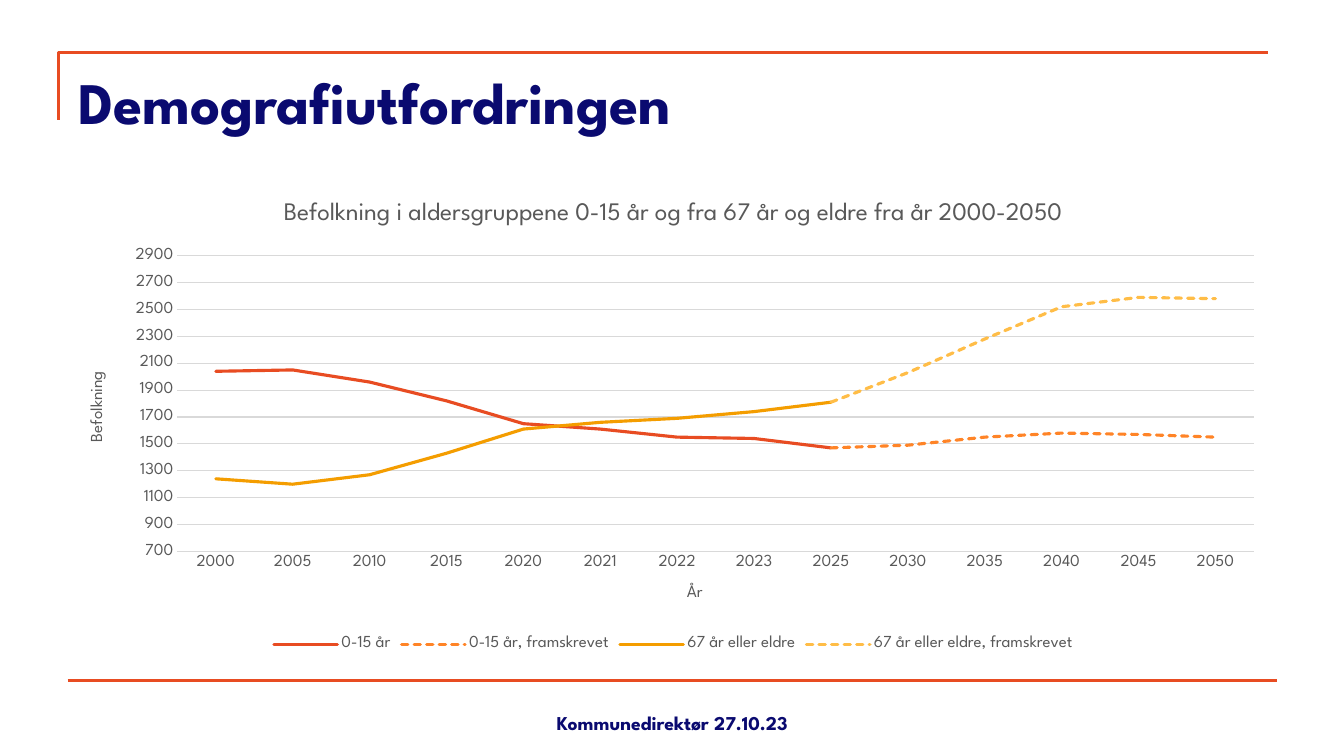
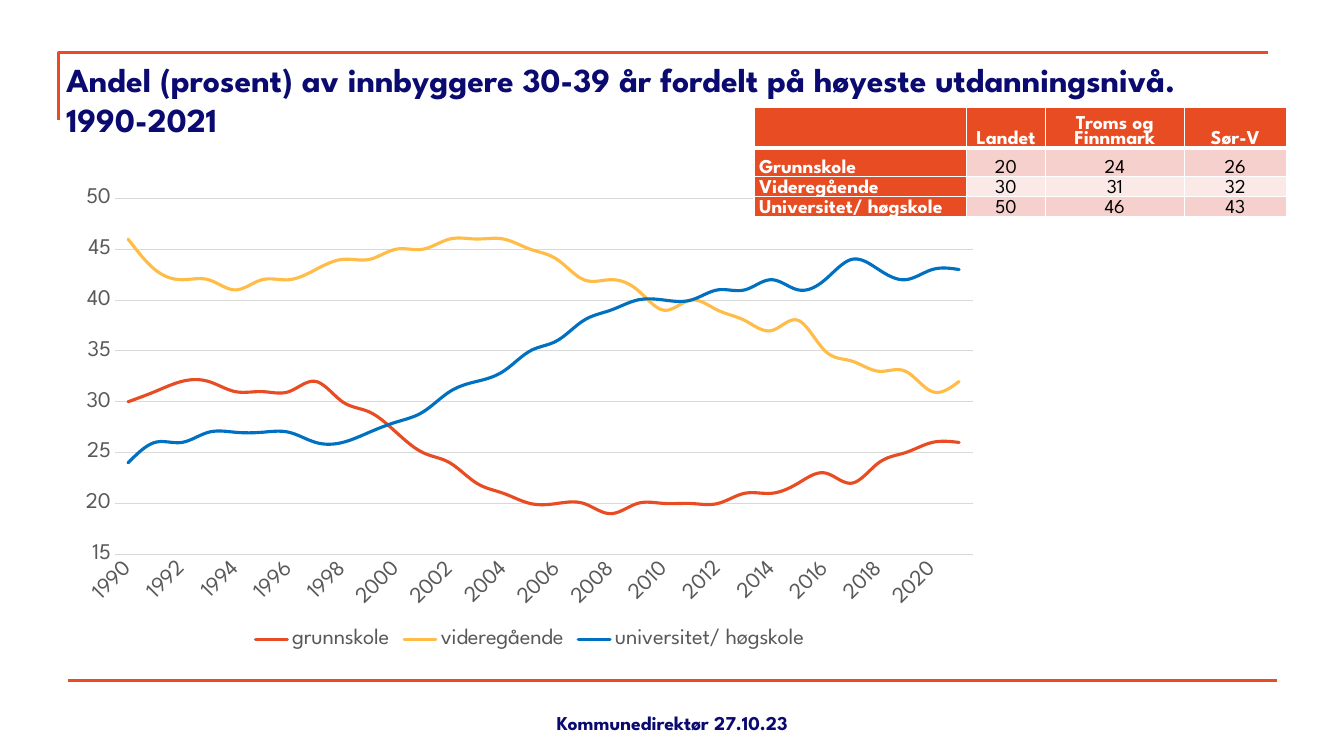
"""Builds two slides on population and education with line charts and a table."""
from lxml import etree
from pptx import Presentation
from pptx import util as u
from pptx.chart.data import CategoryChartData
from pptx.dml.color import RGBColor
from pptx.enum import chart as ch, dml, shapes, text
from pptx.oxml import parse_xml
from pptx.oxml.ns import nsdecls, qn

FONT = "League Spartan"
NAVY = RGBColor(0x0A, 0x0A, 0x70)
RED = RGBColor(0xE8, 0x4C, 0x22)
ORANGE = RGBColor(0xFF, 0x84, 0x27)
AMBER = RGBColor(0xF4, 0x9D, 0x00)
YELLOW = RGBColor(0xFF, 0xBD, 0x47)
BLUE = RGBColor(0x00, 0x70, 0xC0)
GREY = RGBColor(0x59, 0x59, 0x59)
GRID = RGBColor(0xD9, 0xD9, 0xD9)
WHITE = RGBColor(0xFF, 0xFF, 0xFF)
BLACK = RGBColor(0x00, 0x00, 0x00)
PINK = RGBColor(0xF6, 0xD0, 0xCD)
PALE = RGBColor(0xFB, 0xE9, 0xE8)

deck = Presentation()
deck.slide_width, deck.slide_height = u.Inches(13.33), u.Inches(7.5)
COL, ROW = deck.slide_width / 100, deck.slide_height / 100


def style(font, size, color, bold=False):
    font.name, font.size, font.bold = FONT, u.Pt(size), bold
    font.color.rgb = color


def add_line_chart(slide, box, years, series, size, scale, plot, smooth):
    left, top, width, height = box
    data = CategoryChartData()
    data.categories = years
    for name, values, _, _ in series:
        data.add_series(name, values)
    chart = slide.shapes.add_chart(
        ch.XL_CHART_TYPE.LINE, int(left * COL), int(top * ROW),
        int(width * COL), int(height * ROW), data).chart
    style(chart.font, size, GREY)
    chart.has_title = False
    chart.has_legend = True
    chart.legend.position = ch.XL_LEGEND_POSITION.BOTTOM
    chart.legend.include_in_layout = False
    style(chart.legend.font, size, GREY)
    chart.plots[0].vary_by_categories = False
    for line, (_, _, color, dash) in zip(chart.plots[0].series, series):
        line.smooth = smooth
        line.format.line.color.rgb = color
        line.format.line.width = u.Pt(2.25)
        if dash:
            line.format.line.dash_style = dash
        line._element.spPr.find(qn("a:ln")).set("cap", "rnd")
    for axis in (chart.category_axis, chart.value_axis):
        axis.major_tick_mark = ch.XL_TICK_MARK.NONE
        style(axis.tick_labels.font, size, GREY)
    chart.category_axis.format.line.color.rgb = GRID
    chart.category_axis.format.line.width = u.Pt(0.75)
    amounts = chart.value_axis
    amounts.minimum_scale, amounts.maximum_scale, amounts.major_unit = scale
    amounts.tick_labels.number_format = "0"
    amounts.tick_labels.number_format_is_linked = False
    amounts.format.line.fill.background()
    amounts.major_gridlines.format.line.color.rgb = GRID
    amounts.major_gridlines.format.line.width = u.Pt(0.75)
    area = chart._chartSpace.chart.plotArea
    for layout in area.findall(qn("c:layout")):
        area.remove(layout)
    shares = "".join(f'<c:{k} val="{v}"/>' for k, v in zip("xywh", plot))
    area.insert(0, parse_xml(
        f'<c:layout {nsdecls("c")}><c:manualLayout><c:layoutTarget val="inner"/>'
        f'<c:xMode val="edge"/><c:yMode val="edge"/>{shares}'
        '</c:manualLayout></c:layout>'))
    return chart


TITLES = [
    ("Demografiutfordringen", (5.1, 8, 90, 14.4), 42),
    ("Andel (prosent) av innbyggere 30-39 år fordelt på høyeste "
     "utdanningsnivå. 1990-2021", (4.2, 7.07, 90, 14.4), 24),
]
FOOTER = ("Kommunedirektør 27.10.23", (34.2, 91.07, 31.66, 6.67), 14)

for heading in TITLES:
    slide = deck.slides.add_slide(deck.slide_layouts[6])
    outline = slide.shapes.build_freeform(int(4.35 * COL), int(15.87 * ROW))
    outline.add_line_segments(
        [(int(4.35 * COL), int(6.93 * ROW)), (int(94.37 * COL), int(6.93 * ROW))],
        close=False)
    corner = outline.convert_to_shape()
    corner.shadow.inherit = False
    corner.fill.background()
    rule = slide.shapes.add_connector(
        shapes.MSO_CONNECTOR.STRAIGHT, int(5.03 * COL), int(90 * ROW),
        int(95.05 * COL), int(90 * ROW))
    for stroke in (corner.line, rule.line):
        stroke.color.rgb = RED
        stroke.width = u.Pt(2.25)
    etree.SubElement(rule._element.spPr, qn("a:effectLst"))

    for wording, (left, top, width, height), size in (heading, FOOTER):
        frame = slide.shapes.add_textbox(
            int(left * COL), int(top * ROW),
            int(width * COL), int(height * ROW)).text_frame
        frame.word_wrap = True
        frame.text = wording
        paragraph = frame.paragraphs[0]
        style(paragraph.font, size, NAVY, True)
        if wording == FOOTER[0]:
            frame.vertical_anchor = text.MSO_ANCHOR.BOTTOM
            paragraph.alignment = text.PP_ALIGN.CENTER
        else:
            frame.vertical_anchor = text.MSO_ANCHOR.TOP

demography, education = deck.slides

DASH = dml.MSO_LINE.SQUARE_DOT
years = ["2000", "2005", "2010", "2015", "2020", "2021", "2022", "2023",
         "2025", "2030", "2035", "2040", "2045", "2050"]
past, future = [None] * 5, [None] * 8
population = add_line_chart(
    demography, (5.1, 23.87, 90, 62.93), years,
    [("0-15 år",
      [2040, 2050, 1960, 1820, 1650, 1610, 1550, 1540, 1470] + past, RED, None),
     ("0-15 år, framskrevet",
      future + [1470, 1490, 1550, 1580, 1570, 1550], ORANGE, DASH),
     ("67 år eller eldre",
      [1240, 1200, 1270, 1430, 1610, 1660, 1690, 1740, 1810] + past, AMBER, None),
     ("67 år eller eldre, framskrevet",
      future + [1810, 2030, 2280, 2520, 2590, 2580], YELLOW, DASH)],
    12, (700, 3000, 200), (0.09, 0.13, 0.89, 0.65), False)
for owner, wording, size in (
        (population, "Befolkning i aldersgruppene 0-15 år og fra 67 år og eldre "
                     "fra år 2000-2050", 18),
        (population.category_axis, "År", 12),
        (population.value_axis, "Befolkning", 12)):
    owner.has_title = True
    caption = owner.chart_title if owner is population else owner.axis_title
    caption.text_frame.text = wording
    style(caption.text_frame.paragraphs[0].font, size, GREY)
population.value_axis.axis_title.text_frame._txBody.bodyPr.set("rot", "-5400000")

levels = add_line_chart(
    education, (5.1, 23.73, 68.64, 62.8), [str(y) for y in range(1990, 2022)],
    [("grunnskole",
      [30, 31, 32, 32, 31, 31, 31, 32, 30, 29, 27, 25, 24, 22, 21, 20,
       20, 20, 19, 20, 20, 20, 20, 21, 21, 22, 23, 22, 24, 25, 26, 26], RED, None),
     ("videregående",
      [46, 43, 42, 42, 41, 42, 42, 43, 44, 44, 45, 45, 46, 46, 46, 45,
       44, 42, 42, 41, 39, 40, 39, 38, 37, 38, 35, 34, 33, 33, 31, 32], YELLOW, None),
     ("universitet/ høgskole",
      [24, 26, 26, 27, 27, 27, 27, 26, 26, 27, 28, 29, 31, 32, 33, 35,
       36, 38, 39, 40, 40, 40, 41, 41, 42, 41, 42, 44, 43, 42, 43, 43], BLUE, None)],
    16, (15, 50, 5), (0.05, 0.04, 0.93, 0.75), True)
year_axis = levels.category_axis._element
year_axis.txPr.bodyPr.set("rot", "-2700000")
year_axis.find(qn("c:noMultiLvlLbl")).addprevious(
    parse_xml(f'<c:tickLblSkip {nsdecls("c")} val="2"/>'))

SHARES = [
    ["", "Landet", "Troms og Finnmark", "Sør-V"],
    ["Grunnskole", "20", "24", "26"],
    ["Videregående", "30", "31", "32"],
    ["Universitet/ høgskole", "50", "46", "43"],
]
WIDTHS = [15.83, 5.85, 10.35, 7.58]
HEIGHTS = [5.2, 3.75, 2.55, 2.55]
comparison = education.shapes.add_table(
    len(HEIGHTS), len(WIDTHS), int(56.1 * COL), int(14.27 * ROW),
    int(sum(WIDTHS) * COL), int(sum(HEIGHTS) * ROW)).table
for column, width in zip(comparison.columns, WIDTHS):
    column.width = int(width * COL)
for r, (entries, height) in enumerate(zip(SHARES, HEIGHTS)):
    comparison.rows[r].height = int(height * ROW)
    for c, entry in enumerate(entries):
        cell = comparison.cell(r, c)
        is_head = r == 0 or c == 0
        cell.margin_left = cell.margin_right = u.Inches(0.05)
        cell.margin_top = cell.margin_bottom = 0
        cell.vertical_anchor = text.MSO_ANCHOR.BOTTOM
        for side in "LRTB":
            heavy = (r, side) in ((0, "B"), (1, "T"))
            cell._tc.get_or_add_tcPr().append(parse_xml(
                f'<a:ln{side} {nsdecls("a")} w="{u.Pt(3 if heavy else 1)}">'
                f'<a:solidFill><a:srgbClr val="{WHITE}"/></a:solidFill></a:ln{side}>'))
        cell.fill.solid()
        cell.fill.fore_color.rgb = RED if is_head else PINK if r % 2 else PALE
        cell.text = entry
        paragraph = cell.text_frame.paragraphs[0]
        paragraph.line_spacing = 0.85
        paragraph.alignment = text.PP_ALIGN.CENTER if c else text.PP_ALIGN.LEFT
        style(paragraph.font, 14, WHITE if is_head else BLACK, is_head)

deck.save("out.pptx")
